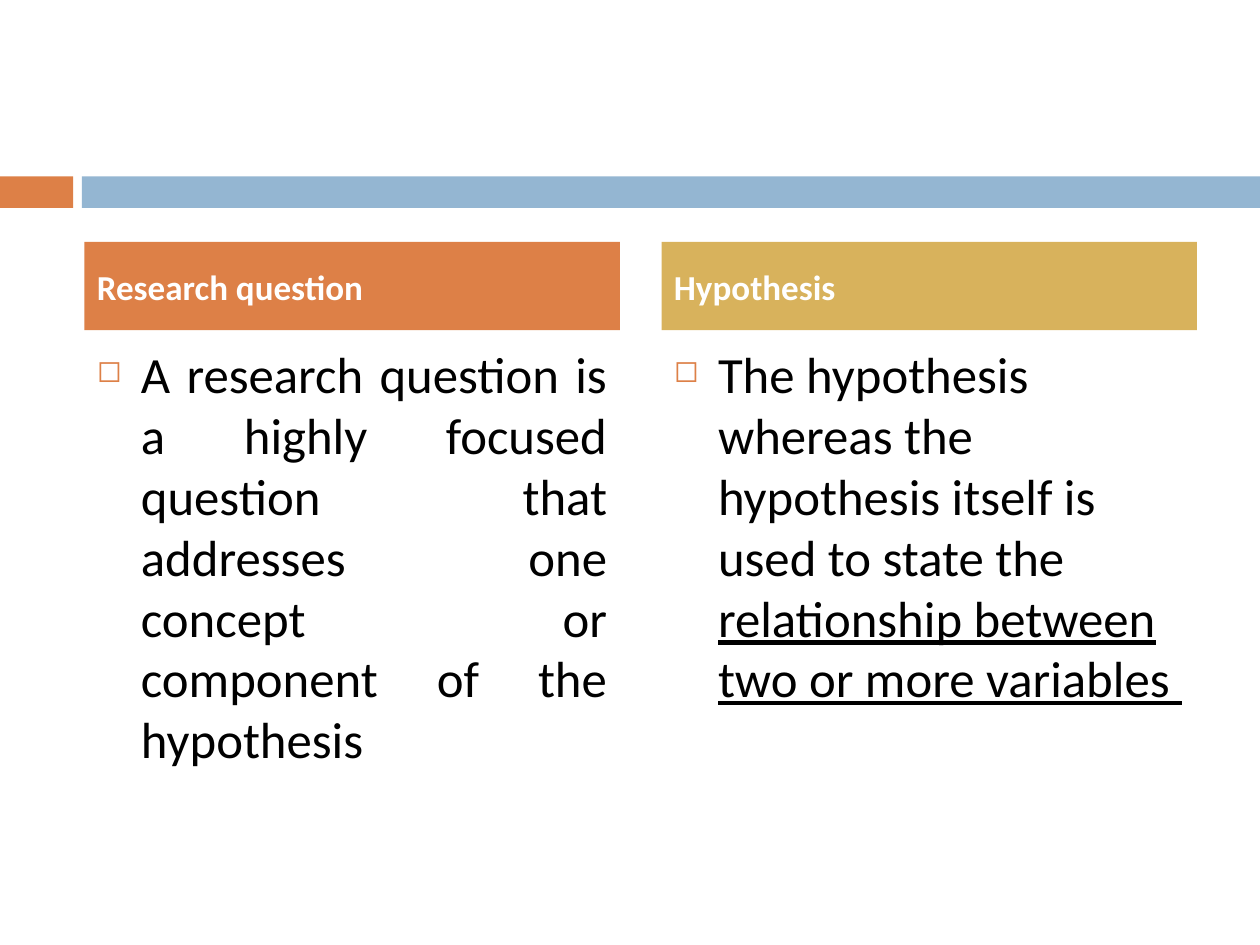
from dataclasses import dataclass

from lxml.etree import SubElement
from pptx import Presentation
from pptx.dml.color import RGBColor
from pptx.enum.shapes import MSO_SHAPE
from pptx.enum.text import MSO_ANCHOR, PP_ALIGN
from pptx.oxml.ns import qn
from pptx.util import Inches, Pt


@dataclass(frozen=True)
class Theme:
    font: str = "Calibri"
    orange: str = "DD8047"
    blue: str = "94B6D2"
    gold: str = "D8B25C"
    white: str = "FFFFFF"
    black: str = "000000"
    header_size: int = 20
    body_size: int = 29
    space_before: int = 7
    indent: float = 0.35


THEME = Theme()
BAND = (0, 1.4, 10, 0.25)
LEFT, TOP, COL_W, GUTTER = 0.67, 1.92, 4.25, 0.33
HEADER_H, HEADER_GAP, BODY_H = 0.7, 0.05, 3.92

# Each column: header, header colour, alignment, (text, underlined) runs
COLUMNS = [
    ("Research question", THEME.orange, PP_ALIGN.JUSTIFY,
     [("A research question is a highly focused question that addresses "
       "one concept or component of the hypothesis", False)]),
    ("Hypothesis", THEME.gold, PP_ALIGN.LEFT,
     [("The hypothesis whereas the hypothesis itself is used to state the ", False),
      ("relationship between two or more variables ", True)]),
]


def add_block(slide, box, color):
    s = slide.shapes.add_shape(MSO_SHAPE.RECTANGLE, *map(Inches, box))
    s.shadow.inherit = False
    s.fill.solid()
    s.fill.fore_color.rgb = RGBColor.from_string(color)
    s.line.fill.background()
    return s


def add_run(p, text, color, **formats):
    r = p.add_run()
    r.text = text
    r.font.color.rgb = RGBColor.from_string(color)
    for name, value in {"name": THEME.font, **formats}.items():
        setattr(r.font, name, value)


def add_bullet(p):
    pPr = p._p.get_or_add_pPr()
    indent = Inches(THEME.indent)
    pPr.set("marL", str(indent))
    pPr.set("indent", str(-indent))
    color = SubElement(pPr, qn("a:buClr"))
    SubElement(color, qn("a:srgbClr"), val=THEME.orange)
    SubElement(pPr, qn("a:buSzPct"), val="60000")
    SubElement(pPr, qn("a:buChar"), char="◻")


def add_band(slide, box):
    """Short orange block, a narrow gap, then a blue bar to the edge."""
    x, y, w, h = box
    short, gap = 0.58, 0.07
    start = short + gap
    add_block(slide, (x, y, short, h), THEME.orange)
    add_block(slide, (x + start, y, w - start, h), THEME.blue)


def add_column(slide, box, header, color, align, runs):
    x, y, w, h = box

    # Header
    tf = add_block(slide, (x, y, w, HEADER_H), color).text_frame
    tf.vertical_anchor = MSO_ANCHOR.MIDDLE
    p = tf.paragraphs[0]
    p.alignment = PP_ALIGN.LEFT
    p.space_before = Pt(THEME.space_before)
    add_run(p, header, THEME.white, size=Pt(THEME.header_size), bold=True)

    # Bulleted body
    top = HEADER_H + HEADER_GAP
    body = (x, y + top, w, h - top)
    tf = slide.shapes.add_textbox(*map(Inches, body)).text_frame
    tf.word_wrap = True
    p = tf.paragraphs[0]
    p.alignment = align
    p.space_before = Pt(THEME.space_before)
    add_bullet(p)
    for text, underlined in runs:
        add_run(p, text, THEME.black, size=Pt(THEME.body_size),
                underline=underlined)


def main():
    prs = Presentation()
    prs.slide_width, prs.slide_height = Inches(10), Inches(7.5)
    slide = prs.slides.add_slide(prs.slide_layouts[6])
    add_band(slide, BAND)
    height = HEADER_H + HEADER_GAP + BODY_H
    for i, column in enumerate(COLUMNS):
        x = LEFT + i * (COL_W + GUTTER)
        add_column(slide, (x, TOP, COL_W, height), *column)
    prs.save("out.pptx")


if __name__ == "__main__":
    main()
